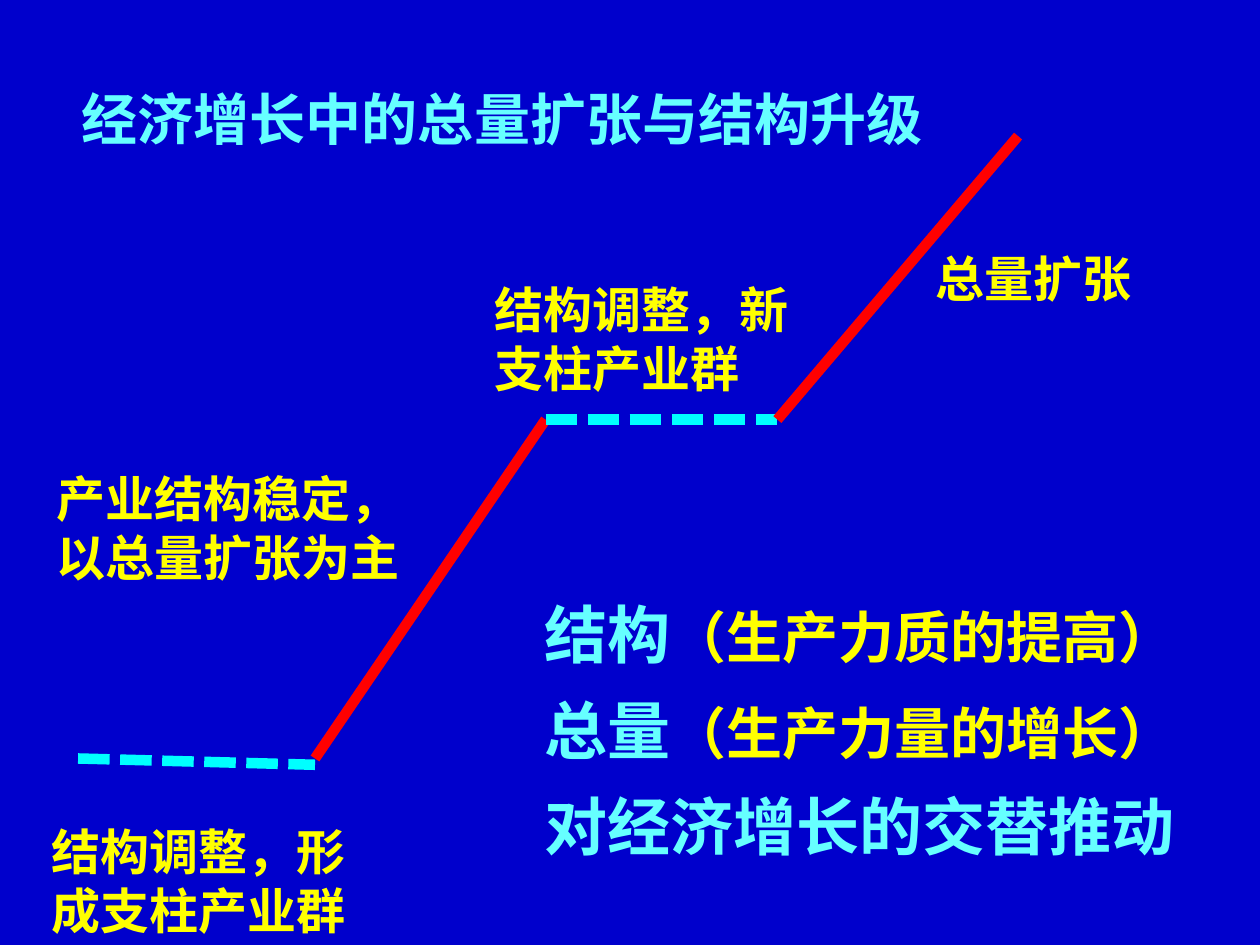
from pptx import Presentation
from pptx import util as u
from pptx.dml.color import RGBColor
from pptx.enum import dml, shapes, text
from pptx.oxml import ns, xmlchemy

NAVY = RGBColor(0x00, 0x00, 0xCC)
RED = RGBColor(0xFF, 0x00, 0x00)
CYAN = RGBColor(0x00, 0xFF, 0xFF)
SKY = RGBColor(0x66, 0xFF, 0xFF)
YELLOW = RGBColor(0xFF, 0xFF, 0x00)

# Corner points of the growth path
FIRST_RISE = (2.5, 6.02)
PLATEAU_START = (4.33, 3.33)
PLATEAU_END = (6.17, 3.33)

STAGE_LABELS = [
    ("结构调整，形成支柱产业群", (0.31, 6.47, 2.67, 1.03)),
    ("产业结构稳定，以总量扩张为主", (0.35, 3.67, 3.07, 1.03)),
    ("结构调整，新支柱产业群", (3.83, 2.17, 2.67, 1.03)),
    ("总量扩张", (7.33, 1.92, 2.17, 0.57)),
]

SUMMARY = [
    ("结构", "（生产力质的提高）"),
    ("总量", "（生产力量的增长）"),
    ("对经济增长的交替推动", ""),
]


def add_text(paragraph, content, size=28, color=YELLOW, bold=True):
    run = paragraph.add_run()
    run.text = content
    run.font.name = "Arial"
    run.font.size = u.Pt(size)
    run.font.bold = bold
    run.font.color.rgb = color


def prepare_frame(shape, box):
    shape.left, shape.top, shape.width, shape.height = map(u.Inches, box)
    frame = shape.text_frame
    frame.word_wrap = True
    frame.auto_size = text.MSO_AUTO_SIZE.NONE
    frame.vertical_anchor = text.MSO_ANCHOR.TOP
    frame.paragraphs[0].alignment = text.PP_ALIGN.LEFT
    return frame


def add_label(slide, content, box):
    shape = slide.shapes.add_textbox(*map(u.Inches, box))
    add_text(prepare_frame(shape, box).paragraphs[0], content)


def add_stage(slide, start, end, color, dashed=False):
    line = slide.shapes.add_connector(
        shapes.MSO_CONNECTOR.STRAIGHT, *map(u.Inches, start + end))
    line.line.color.rgb = color
    line.line.width = u.Pt(6)
    if dashed:
        line.line.dash_style = dml.MSO_LINE.SQUARE_DOT
    properties = line.element.find(ns.qn("p:spPr"))
    properties.append(xmlchemy.OxmlElement("a:effectLst"))


def remove_bullet(paragraph):
    properties = paragraph._p.get_or_add_pPr()
    properties.set("marL", "0")
    properties.set("indent", "0")
    properties.append(xmlchemy.OxmlElement("a:buNone"))


def fill_summary(placeholder):
    frame = prepare_frame(placeholder, (4.22, 4.77, 5.99, 2.23))
    for index, (term, note) in enumerate(SUMMARY):
        paragraph = frame.add_paragraph() if index else frame.paragraphs[0]
        paragraph.line_spacing = 0.85
        paragraph.space_before = u.Pt(18 if index else 0)
        remove_bullet(paragraph)
        add_text(paragraph, term, size=36, color=SKY)
        if note:
            add_text(paragraph, note, size=32)


def main():
    presentation = Presentation()
    presentation.slide_width = u.Inches(10)
    presentation.slide_height = u.Inches(7.5)
    slide = presentation.slides.add_slide(presentation.slide_layouts[1])
    slide.background.fill.solid()
    slide.background.fill.fore_color.rgb = NAVY

    # Title
    title = prepare_frame(slide.shapes.title, (0.55, 0.62, 7.11, 0.64))
    add_text(title.paragraphs[0], "经济增长中的总量扩张与结构升级",
             size=32, color=SKY)

    # Growth path: dashed restructuring, solid expansion
    add_stage(slide, (0.62, 6.02), (2.5, 6.07), CYAN, dashed=True)
    add_stage(slide, FIRST_RISE, PLATEAU_START, RED)
    add_stage(slide, PLATEAU_START, PLATEAU_END, CYAN, dashed=True)
    add_stage(slide, PLATEAU_END, (8.08, 1.08), RED)

    # Stage labels
    for content, box in STAGE_LABELS:
        add_label(slide, content, box)

    # Summary list
    fill_summary(slide.placeholders[1])

    presentation.save("out.pptx")


if __name__ == "__main__":
    main()
